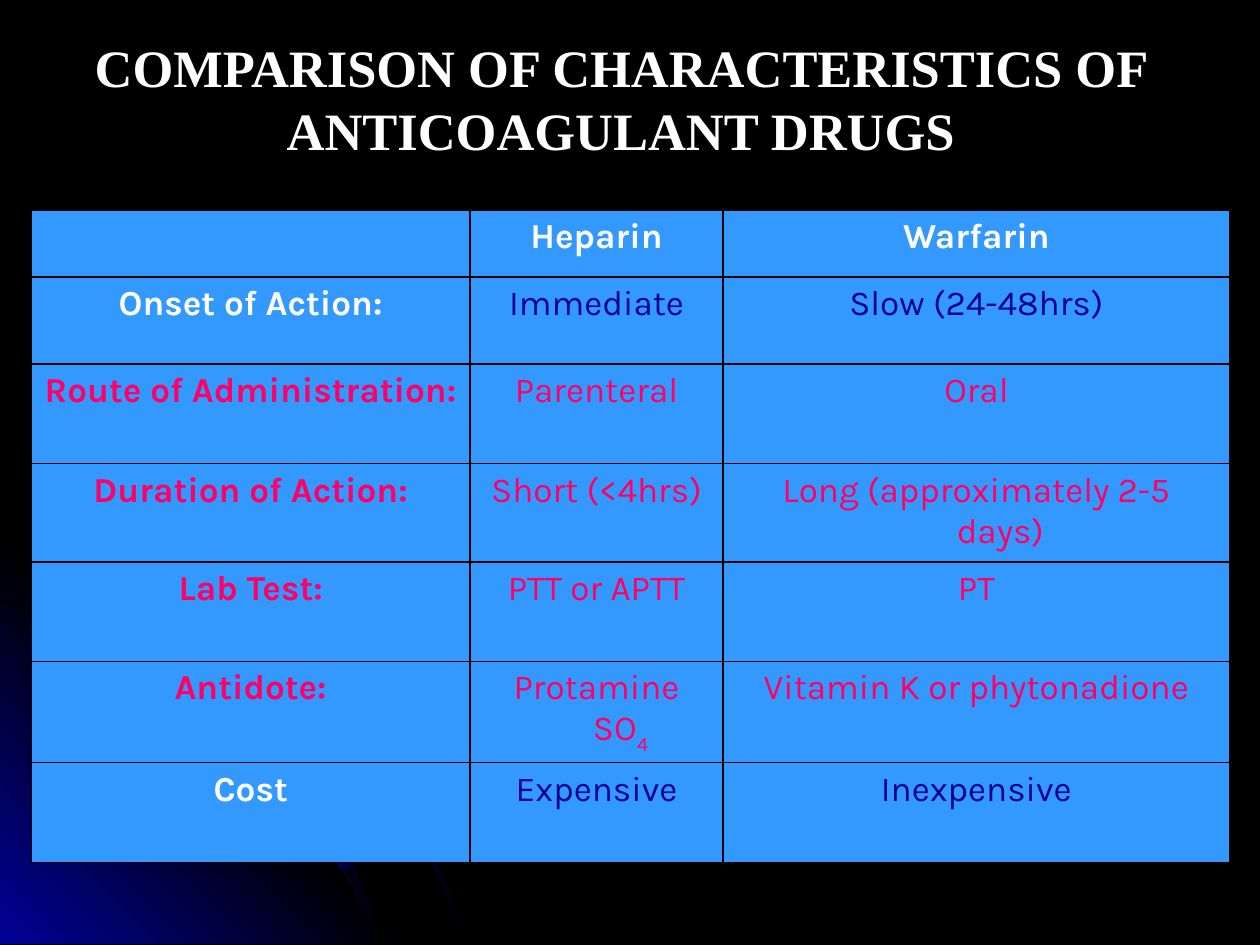
import dataclasses
import typing

import pptx
import pptx.dml.color
import pptx.enum.text
import pptx.enum.shapes
import pptx.oxml
import pptx.oxml.ns
import pptx.util
from lxml import etree

Inches = pptx.util.Inches
Pt = pptx.util.Pt
RGB = pptx.dml.color.RGBColor
qn = pptx.oxml.ns.qn
CENTER = pptx.enum.text.PP_ALIGN.CENTER

BLACK = RGB(0x00, 0x00, 0x00)
WHITE = RGB(0xFF, 0xFF, 0xFF)
NAVY = RGB(0x01, 0x01, 0x99)
PINK = RGB(0xFF, 0x00, 0x66)
BLUE = RGB(0x33, 0x99, 0xFF)

Points = typing.List[typing.Tuple[float, float]]


@dataclasses.dataclass
class Path:
    points: Points
    stops: typing.List[RGB]
    angle: int


@dataclasses.dataclass
class Dot:
    left: float
    top: float
    size: float
    angle: int


@dataclasses.dataclass
class Row:
    height: float
    texts: typing.Tuple[str, str, str]
    label: RGB
    value: RGB
    heavy: bool = False


GLOW = [BLACK, NAVY, BLACK]
PATHS = [
    Path([(0.57, 4.47), (0.28, 4.41), (0, 4.35), (0, 4.38), (0.28, 4.43),
          (0.56, 4.49), (0.97, 4.61), (1.35, 4.78), (1.73, 4.99), (2.08, 5.23),
          (2.41, 5.49), (2.71, 5.79), (2.98, 6.12), (3.23, 6.49), (3.37, 6.73),
          (3.5, 6.98), (3.6, 7.23), (3.7, 7.49), (3.72, 7.49), (3.62, 7.23),
          (3.52, 6.98), (3.39, 6.73), (3.25, 6.48), (3, 6.11), (2.72, 5.78),
          (2.42, 5.48), (2.09, 5.21), (1.74, 4.97), (1.36, 4.77), (0.98, 4.59)],
         GLOW, 315),
    Path([(3.22, 7.49), (0, 7.49), (0, 4.27)], [NAVY, BLACK, NAVY], 45),
    Path([(2.85, 7.14), (2.94, 7.32), (3.01, 7.49), (3.03, 7.49), (2.96, 7.3),
          (2.86, 7.12), (2.66, 6.76), (2.42, 6.4), (2.15, 6.06), (1.84, 5.76),
          (1.52, 5.49), (1.17, 5.26), (0.79, 5.05), (0.41, 4.88), (0, 4.75),
          (0, 4.77), (0.39, 4.9), (0.77, 5.07), (1.15, 5.28), (1.5, 5.51),
          (1.83, 5.78), (2.13, 6.08), (2.4, 6.41), (2.65, 6.77)],
         GLOW, 315),
    Path([(0, 4.42), (0, 4.44), (0.36, 4.57), (0.74, 4.75), (1.09, 4.94),
          (1.42, 5.18), (1.73, 5.44), (2.02, 5.75), (2.27, 6.05), (2.52, 6.41),
          (2.67, 6.67), (2.8, 6.94), (2.92, 7.22), (3.01, 7.49), (3.03, 7.49),
          (2.94, 7.2), (2.82, 6.93), (2.69, 6.65), (2.54, 6.39), (2.29, 6.03),
          (2.04, 5.73), (1.75, 5.43), (1.44, 5.16), (1.11, 4.93), (0.76, 4.73),
          (0.39, 4.55)],
         GLOW, 315),
]
DOTS = [Dot(0.36, 4.83, 0.15, 45), Dot(2.67, 6.74, 0.16, 315),
        Dot(1.37, 4.73, 0.21, 45)]

WIDTHS = [3.48, 2.01, 4.02]
ROWS = [
    Row(0.53, ("", "Heparin", "Warfarin"), WHITE, WHITE, True),
    Row(0.69, ("Onset of Action:", "Immediate", "Slow (24-48hrs)"), WHITE, NAVY),
    Row(0.79, ("Route of Administration:", "Parenteral", "Oral"), PINK, PINK),
    Row(0.78, ("Duration of Action:", "Short (<4hrs)",
               "Long (approximately 2-5 days)"), PINK, PINK),
    Row(0.79, ("Lab Test:", "PTT or APTT", "PT"), PINK, PINK),
    Row(0.79, ("Antidote:", "Protamine SO", "Vitamin K or phytonadione"),
        PINK, PINK),
    Row(0.79, ("Cost", "Expensive", "Inexpensive"), WHITE, NAVY),
]
TITLE = ["COMPARISON OF CHARACTERISTICS OF ", "ANTICOAGULANT DRUGS "]


def style(run, face: str, size: float, color: RGB, bold: bool) -> None:
    run.font.name = face
    run.font.size = Pt(size)
    run.font.color.rgb = color
    run.font.bold = bold


def shade(shape, stops: typing.List[RGB], angle: int) -> None:
    shape.shadow.inherit = False
    shape.line.fill.background()
    shape.fill.gradient()
    shape.fill.gradient_angle = angle
    ramp = shape._element.spPr.find(qn("a:gradFill")).find(qn("a:gsLst"))
    for old in list(ramp):
        ramp.remove(old)
    for i, color in enumerate(stops):
        stop = etree.SubElement(ramp, qn("a:gs"),
                                pos=str(100000 * i // (len(stops) - 1)))
        etree.SubElement(stop, qn("a:srgbClr"), val=str(color))


def draw_path(slide, path: Path) -> None:
    spots = [(Inches(x), Inches(y)) for x, y in path.points]
    pen = slide.shapes.build_freeform(*spots[0])
    pen.add_line_segments(spots[1:], close=True)
    shade(pen.convert_to_shape(), path.stops, path.angle)


def draw_dot(slide, dot: Dot) -> None:
    shape = slide.shapes.add_shape(
        pptx.enum.shapes.MSO_SHAPE.OVAL, Inches(dot.left), Inches(dot.top),
        Inches(dot.size), Inches(dot.size))
    shade(shape, [NAVY, BLACK], dot.angle)


def draw_cell(cell, text: str, color: RGB, bold: bool) -> None:
    props = cell._tc.get_or_add_tcPr()
    for side in ("a:lnL", "a:lnR", "a:lnT", "a:lnB"):
        line = etree.SubElement(props, qn(side), w=str(Pt(1)))
        paint = etree.SubElement(line, qn("a:solidFill"))
        etree.SubElement(paint, qn("a:srgbClr"), val=str(BLACK))
    cell.fill.solid()
    cell.fill.fore_color.rgb = BLUE
    if not text:
        return
    cell.text_frame.text = text
    para = cell.text_frame.paragraphs[0]
    para.alignment = CENTER
    indent = para._p.get_or_add_pPr()
    indent.set("marL", str(Inches(0.38)))
    indent.set("indent", str(-Inches(0.38)))
    if text.endswith("SO"):
        sub = para.add_run()
        sub.text = "4"
        sub.font._element.set("baseline", "-30000")
    for run in para.runs:
        style(run, "Karla", 20, color, bold)


def draw_table(slide) -> None:
    frame = slide.shapes.add_table(
        len(ROWS), len(WIDTHS), Inches(0.25), Inches(1.67), Inches(9.5),
        Inches(sum(row.height for row in ROWS)))
    table = frame.table
    table.horz_banding = False
    for col, width in zip(table.columns, WIDTHS):
        col.width = Inches(width)
    for r, row in enumerate(ROWS):
        table.rows[r].height = Inches(row.height)
        for c, text in enumerate(row.texts):
            color = row.value if c else row.label
            draw_cell(table.cell(r, c), text, color, row.heavy or c == 0)


def draw_title(slide) -> None:
    box = slide.shapes.add_textbox(Inches(0.62), Inches(0.23),
                                   Inches(8.72), Inches(1.1))
    frame = box.text_frame
    frame.text = "\n".join(TITLE)
    frame.word_wrap = False
    frame.auto_size = pptx.enum.text.MSO_AUTO_SIZE.SHAPE_TO_FIT_TEXT
    frame.vertical_anchor = pptx.enum.text.MSO_ANCHOR.MIDDLE
    for para in frame.paragraphs:
        para.alignment = CENTER
        style(para.runs[0], "Times New Roman", 30, WHITE, True)


def main() -> None:
    deck = pptx.Presentation()
    deck.slide_width = Inches(10)
    deck.slide_height = Inches(7.5)
    slide = deck.slides.add_slide(deck.slide_layouts[6])
    slide.background.fill.solid()
    slide.background.fill.fore_color.rgb = BLACK
    for path in PATHS:
        draw_path(slide, path)
    for dot in DOTS:
        draw_dot(slide, dot)
    draw_table(slide)
    draw_title(slide)
    deck.save("out.pptx")


if __name__ == "__main__":
    main()
